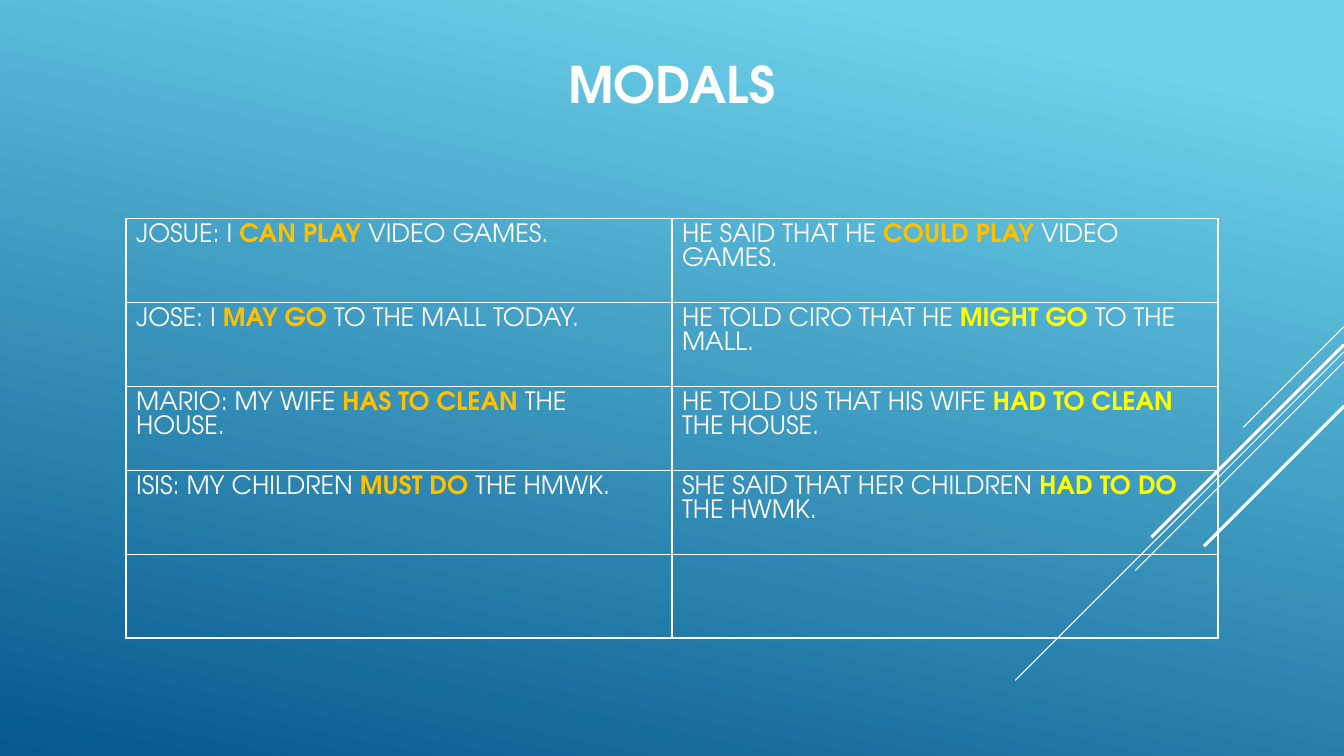
from dataclasses import dataclass

from lxml.etree import SubElement
from pptx import Presentation
from pptx.dml.color import RGBColor
from pptx.enum.shapes import MSO_CONNECTOR
from pptx.enum.text import MSO_ANCHOR, PP_ALIGN
from pptx.oxml.ns import qn
from pptx.util import Inches, Pt

WHITE = RGBColor(0xFF, 0xFF, 0xFF)
ORANGE = RGBColor(0xFF, 0xC0, 0x00)
YELLOW = RGBColor(0xFF, 0xFF, 0x00)
SKY = RGBColor(0x6E, 0xD2, 0xEB)
DEEP_BLUE = RGBColor(0x06, 0x58, 0x8E)
FONT = "TeX Gyre Adventor"
SLIDE_WIDTH = 13.33


@dataclass
class Streak:
    """A 45-degree line running down and left from the right edge."""
    top: float
    reach: float
    weight: float


@dataclass
class Sentence:
    start: str
    modal: str
    end: str
    accent: RGBColor = ORANGE


STREAKS = [
    Streak(3.24, 1.0, 0.75),
    Streak(3.49, 3.26, 0.75),
    Streak(3.59, 2.07, 0.75),
    Streak(3.42, 1.91, 2.25),
    Streak(4.03, 1.39, 2.25),
]

# Direct speech on the left, reported speech on the right
SENTENCE_PAIRS = [
    (Sentence("JOSUE: I ", "CAN PLAY ", "VIDEO GAMES."),
     Sentence("HE SAID THAT HE ", "COULD PLAY ", "VIDEO GAMES.")),
    (Sentence("JOSE: I ", "MAY GO ", "TO THE MALL TODAY."),
     Sentence("HE TOLD CIRO THAT HE ", "MIGHT GO ", "TO THE MALL.", YELLOW)),
    (Sentence("MARIO: MY WIFE ", "HAS TO CLEAN ", "THE HOUSE."),
     Sentence("HE TOLD US THAT HIS WIFE ", "HAD TO CLEAN ", "THE HOUSE.", YELLOW)),
    (Sentence("ISIS: MY CHILDREN ", "MUST DO ", "THE HMWK."),
     Sentence("SHE SAID THAT HER CHILDREN ", "HAD TO DO ", "THE HWMK.", YELLOW)),
]
ROWS, COLUMNS = len(SENTENCE_PAIRS) + 1, 2


def apply_format(target, values: dict) -> None:
    for attribute, value in values.items():
        setattr(target, attribute, value)


def add_text(paragraph, text: str, size: int, color: RGBColor, bold: bool) -> None:
    run = paragraph.add_run()
    run.text = text
    apply_format(run.font, {"name": FONT, "size": Pt(size), "bold": bold})
    run.font.color.rgb = color


def draw_streak(slide, streak: Streak) -> None:
    line = slide.shapes.add_connector(
        MSO_CONNECTOR.STRAIGHT, Inches(SLIDE_WIDTH), Inches(streak.top),
        Inches(SLIDE_WIDTH - streak.reach), Inches(streak.top + streak.reach))
    line.line.color.rgb = WHITE
    line.line.width = Pt(streak.weight)
    SubElement(line._element.spPr, qn("a:effectLst"))


def outline_cell(cell) -> None:
    cell.fill.background()
    properties = cell._tc.get_or_add_tcPr()
    for position, side in enumerate(("a:lnL", "a:lnR", "a:lnT", "a:lnB")):
        border = SubElement(properties, qn(side), w=str(Pt(1)))
        fill = SubElement(border, qn("a:solidFill"))
        SubElement(fill, qn("a:srgbClr"), val=str(WHITE))
        properties.insert(position, border)


def write_sentence(cell, sentence: Sentence) -> None:
    paragraph = cell.text_frame.paragraphs[0]
    paragraph.line_spacing = Pt(17)
    add_text(paragraph, sentence.start, 18, WHITE, False)
    add_text(paragraph, sentence.modal, 18, sentence.accent, True)
    add_text(paragraph, sentence.end, 18, WHITE, False)


def main() -> None:
    deck = Presentation()
    apply_format(deck, {"slide_width": Inches(SLIDE_WIDTH), "slide_height": Inches(7.5)})
    slide = deck.slides.add_slide(deck.slide_layouts[5])

    # Background
    backdrop = slide.background.fill
    backdrop.gradient()
    backdrop.gradient_angle = 360 - 102
    for stop, (position, color) in zip(backdrop.gradient_stops, [(0.1, SKY), (1.0, DEEP_BLUE)]):
        stop.position = position
        stop.color.rgb = color

    # Diagonal streaks
    for streak in STREAKS:
        draw_streak(slide, streak)

    # Title
    title = slide.shapes.title
    apply_format(title, {"left": Inches(2), "top": Inches(0),
                         "width": Inches(9.33), "height": Inches(1.65)})
    title.text_frame.vertical_anchor = MSO_ANCHOR.MIDDLE
    heading = title.text_frame.paragraphs[0]
    heading.alignment = PP_ALIGN.CENTER
    add_text(heading, "MODALS", 36, WHITE, True)

    # Sentence table
    sentences = slide.shapes.add_table(
        ROWS, COLUMNS, Inches(1.25), Inches(2.17), Inches(10.83), Inches(4.16)).table
    apply_format(sentences, {"first_row": False, "horz_banding": False})
    for cell in sentences.iter_cells():
        apply_format(cell, {"margin_top": Inches(0.05), "margin_bottom": Inches(0)})
        outline_cell(cell)
    for row, pair in enumerate(SENTENCE_PAIRS):
        for column, sentence in enumerate(pair):
            write_sentence(sentences.cell(row, column), sentence)

    deck.save("out.pptx")


if __name__ == "__main__":
    main()
